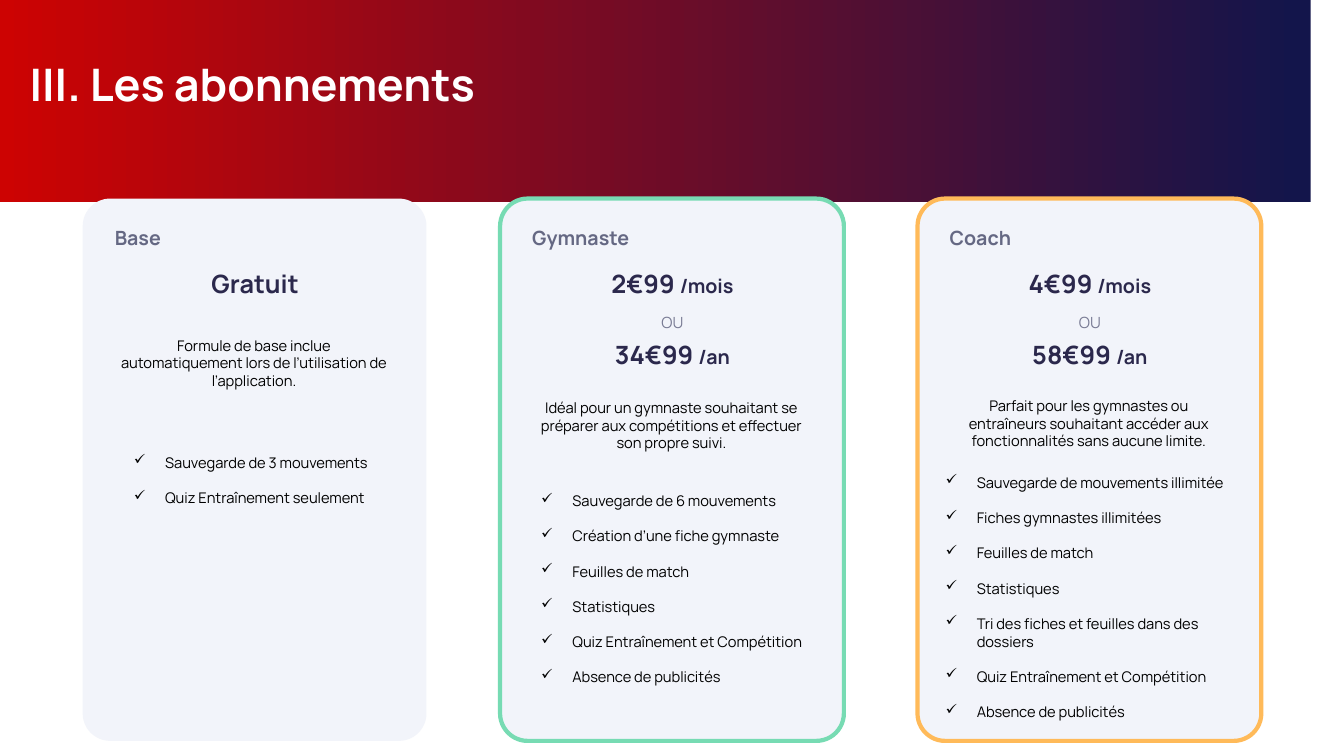
from dataclasses import dataclass

from lxml import etree
from pptx import Presentation
from pptx import util as u
from pptx.dml.color import RGBColor
from pptx.enum import shapes, text
from pptx.oxml import ns


@dataclass(frozen=True)
class Theme:
    font: str = "Manrope"
    white: str = "FFFFFF"
    black: str = "000000"
    navy: str = "13154B"
    red: str = "CD0302"
    card: str = "F2F4FA"
    name: str = "656883"
    price: str = "2B284C"
    muted: str = "797B94"
    green: str = "77DBB3"
    orange: str = "FFBA59"
    title_size: float = 32
    price_size: float = 18
    name_size: float = 14
    or_size: float = 11
    body_size: float = 10.5
    item_gap: float = 12.6
    border: float = 3


@dataclass(frozen=True)
class Grid:
    width: float = 13.33
    height: float = 7.5
    left: float = 0.82
    pitch: float = 4.14
    top: float = 1.97
    card_width: float = 3.41
    card_height: float = 5.38
    bullet: float = 0.31

    def area(self, column, dx, y, width, height):
        """Turn an offset inside a card column into slide lengths."""
        return inches(self.left + column * self.pitch + dx, y, width, height)


@dataclass(frozen=True)
class Plan:
    name: str
    prices: tuple
    pitch: str
    pitch_top: float
    items: tuple
    items_area: tuple  # offset in the card, top, width, height
    border: str = ""


THEME = Theme()
GRID = Grid()
PLANS = (
    Plan("Base", (("Gratuit", ""),),
         "Formule de base inclue automatiquement lors de l’utilisation de l’application.",
         3.29,
         ("Sauvegarde de 3 mouvements", "Quiz Entraînement seulement"),
         (0.41, 4.45, 2.59, 0.81)),
    Plan("Gymnaste", (("2€99 ", "/mois"), ("34€99 ", "/an")),
         "Idéal pour un gymnaste souhaitant se préparer aux compétitions "
         "et effectuer son propre suivi.",
         3.91,
         ("Sauvegarde de 6 mouvements", "Création d’une fiche gymnaste",
          "Feuilles de match", "Statistiques",
          "Quiz Entraînement et Compétition", "Absence de publicités"),
         (0.31, 4.83, 2.8, 2.04), THEME.green),
    Plan("Coach", (("4€99 ", "/mois"), ("58€99 ", "/an")),
         "Parfait pour les gymnastes ou entraîneurs souhaitant accéder aux "
         "fonctionnalités sans aucune limite.",
         3.89,
         ("Sauvegarde de mouvements illimitée", "Fiches gymnastes illimitées",
          "Feuilles de match", "Statistiques",
          "Tri des fiches et feuilles dans des dossiers",
          "Quiz Entraînement et Compétition", "Absence de publicités"),
         (0.18, 4.65, 3.06, 2.57), THEME.orange),
)


def inches(*lengths):
    return [u.Inches(length) for length in lengths]


def rgb(code):
    return RGBColor.from_string(code)


def style(span, size, color, bold=False):
    span.font.name = THEME.font
    span.font.size = u.Pt(size)
    span.font.color.rgb = rgb(color)
    span.font.bold = bold


def add_text(parent, area, spans, color, bold=False, centred=True):
    """Add a one-paragraph box; spans are (wording, size) pairs."""
    box = parent.shapes.add_textbox(*area)
    frame = box.text_frame
    frame.word_wrap = True
    frame.auto_size = text.MSO_AUTO_SIZE.SHAPE_TO_FIT_TEXT
    para = frame.paragraphs[0]
    para.alignment = text.PP_ALIGN.CENTER if centred else text.PP_ALIGN.LEFT
    for wording, size in spans:
        span = para.add_run()
        span.text = wording
        style(span, size, color, bold)


def add_checklist(parent, area, items):
    frame = parent.shapes.add_textbox(*area).text_frame
    frame.word_wrap = True
    frame.text = "\n".join(items)
    for index, para in enumerate(frame.paragraphs):
        style(para.runs[0], THEME.body_size, THEME.black)
        if index:
            para.space_before = u.Pt(THEME.item_gap)
        props = para._p.get_or_add_pPr()
        indent = u.Inches(GRID.bullet)
        props.set("marL", str(indent))
        props.set("indent", str(-indent))
        etree.SubElement(props, ns.qn("a:buChar")).set("char", "✓")


def wave(steps=80):
    """Points of the banner's lower edge, a cubic curve from right to left."""
    controls = ((GRID.width, 1.84), (8.38, 1.23), (4.34, 1.96), (0, 1.84))
    for step in range(steps + 1):
        t = step / steps
        weights = ((1 - t) ** 3, 3 * t * (1 - t) ** 2, 3 * t * t * (1 - t), t ** 3)
        yield tuple(sum(w * point[axis] for w, point in zip(weights, controls))
                    for axis in (0, 1))


def add_banner(page):
    builder = page.shapes.build_freeform(0, 0, scale=u.Inches(1))
    builder.add_line_segments([(GRID.width, 0), *wave()], close=True)
    banner = builder.convert_to_shape()
    banner.shadow.inherit = False
    banner.line.fill.background()
    banner.fill.gradient()
    banner.fill.gradient_angle = 180
    stops = ((0.01, THEME.navy), (1, THEME.red))
    for stop, (position, color) in zip(banner.fill.gradient_stops, stops):
        stop.position = position
        stop.color.rgb = rgb(color)


def add_panel(parent, column, border):
    area = GRID.area(column, 0, GRID.top, GRID.card_width, GRID.card_height)
    panel = parent.shapes.add_shape(shapes.MSO_SHAPE.ROUNDED_RECTANGLE, *area)
    panel.adjustments[0] = 0.08
    panel.shadow.inherit = False
    panel.fill.solid()
    panel.fill.fore_color.rgb = rgb(THEME.card)
    if border:
        panel.line.color.rgb = rgb(border)
        panel.line.width = u.Pt(THEME.border)
    else:
        panel.line.fill.background()


def add_card(page, column, plan):
    card = page.shapes.add_group_shape()
    add_panel(card, column, plan.border)
    add_text(card, GRID.area(column, 0.22, 2.19, 1.52, 0.34),
             [(plan.name, THEME.name_size)], THEME.name, bold=True, centred=False)
    for row, (amount, period) in enumerate(plan.prices):
        spans = [(amount, THEME.price_size)]
        if period:
            spans.append((period, THEME.name_size))
        add_text(card, GRID.area(column, 0.69, 2.61 + row * 0.71, 2.04, 0.4),
                 spans, THEME.price, bold=True)
    if len(plan.prices) > 1:
        add_text(card, GRID.area(column, 0.69, 3.06, 2.04, 0.29),
                 [("OU", THEME.or_size)], THEME.muted)
    add_text(card, GRID.area(column, 0.25, plan.pitch_top, 2.9, 0.63),
             [(plan.pitch, THEME.body_size)], THEME.black)
    add_checklist(card, GRID.area(column, *plan.items_area), plan.items)


def main():
    deck = Presentation()
    deck.slide_width, deck.slide_height = inches(GRID.width, GRID.height)
    page = deck.slides.add_slide(deck.slide_layouts[6])
    add_banner(page)
    add_text(page, inches(0, 0.51, 5.01, 0.64),
             [("III. Les abonnements", THEME.title_size)], THEME.white, bold=True)
    for column, plan in enumerate(PLANS):
        add_card(page, column, plan)
    deck.save("out.pptx")


if __name__ == "__main__":
    main()
